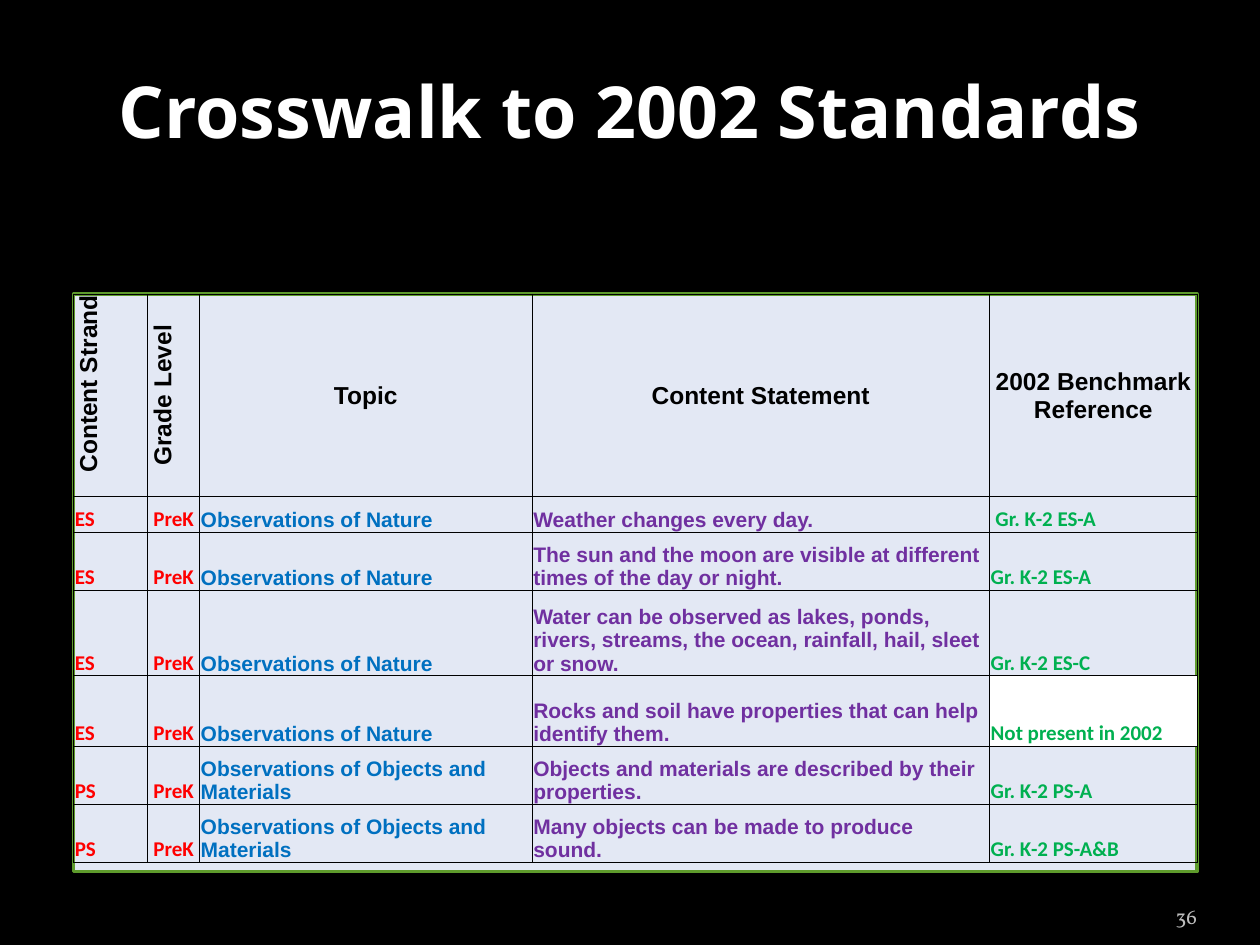
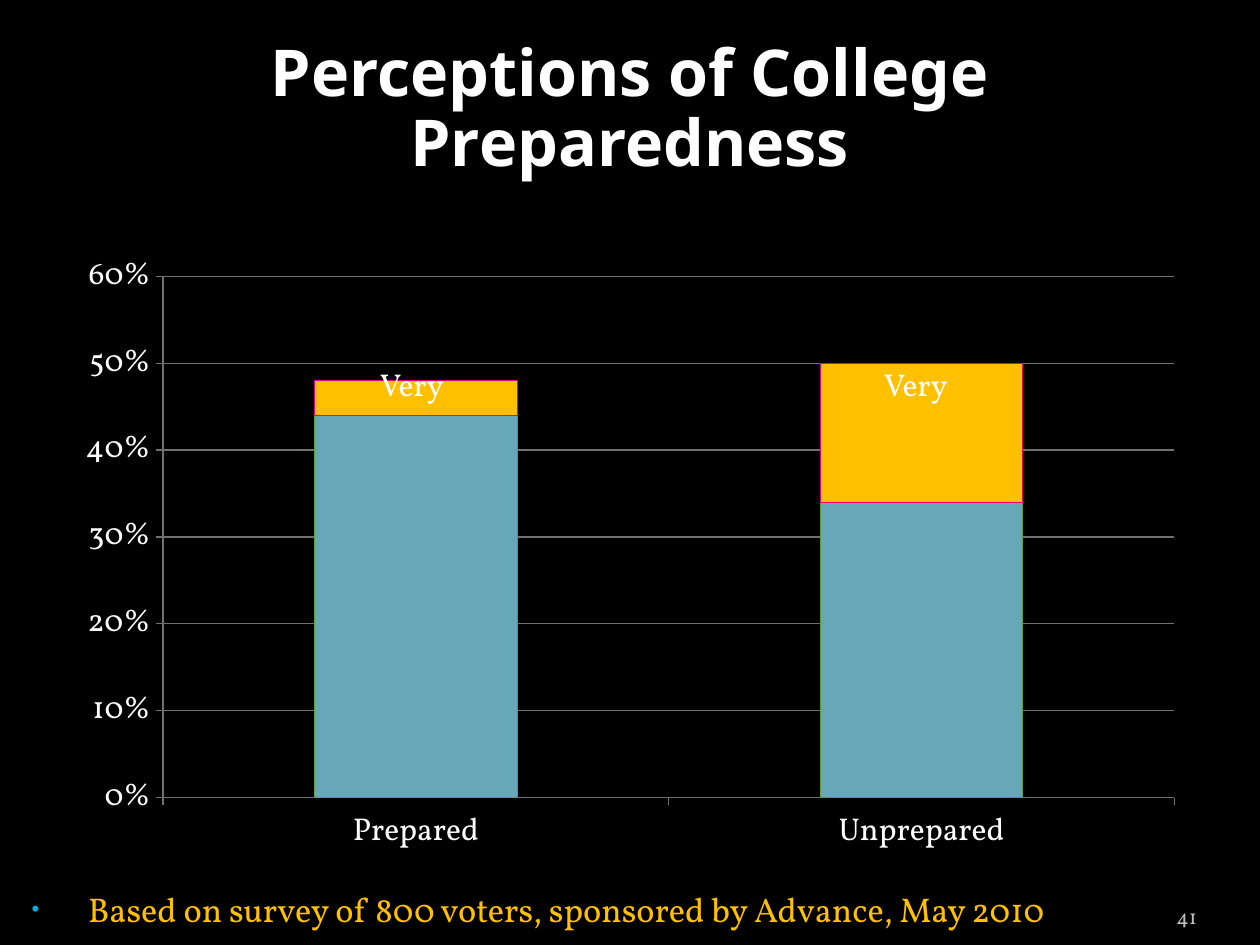
from lxml import etree
from pptx import Presentation
from pptx.chart.data import CategoryChartData
from pptx.dml.color import RGBColor
from pptx.enum.chart import XL_CHART_TYPE, XL_TICK_MARK
from pptx.enum.shapes import MSO_SHAPE
from pptx.enum.text import MSO_ANCHOR, MSO_AUTO_SIZE, PP_ALIGN
from pptx.oxml.ns import qn
from pptx.util import Inches, Pt

LEFT, CENTER, RIGHT = PP_ALIGN.LEFT, PP_ALIGN.CENTER, PP_ALIGN.RIGHT
TOP, MIDDLE, BOTTOM = MSO_ANCHOR.TOP, MSO_ANCHOR.MIDDLE, MSO_ANCHOR.BOTTOM
FIXED, GROW = MSO_AUTO_SIZE.NONE, MSO_AUTO_SIZE.SHAPE_TO_FIT_TEXT
STACKED, OUTSIDE = XL_CHART_TYPE.COLUMN_STACKED, XL_TICK_MARK.OUTSIDE
RECTANGLE = MSO_SHAPE.RECTANGLE

TITLE_AND_BODY, TITLE_ONLY = 1, 5
COLUMNS, ROWS = 120, 90
TITLE_FONT, TEXT_FONT, TABLE_FONT, CODE_FONT = "Noto Sans", "Vollkorn", "Arial", "Calibri"
COLORS = {
    "black": "000000", "white": "FFFFFF", "number": "BDBDBD", "panel": "E3E8F4",
    "panel line": "5E9B2C", "red": "FF0000", "blue": "0070C0", "purple": "7030A0",
    "green": "00B050", "bullet": "00ADDC", "gold": "FFC000", "teal": "66A7B9",
    "axis": "707070", "teal line": "5E9B2C", "gold line": "E6007E",
}

HEADINGS = ["Content Strand", "Grade Level", "Topic", "Content Statement",
            "2002 Benchmark Reference"]
NATURE = "Observations of Nature"
OBJECTS = "Observations of Objects and Materials"
STANDARDS = [
    ("ES", NATURE, "Weather changes every day.", " Gr. K-2 ES-A"),
    ("ES", NATURE, "The sun and the moon are visible at different times of the day or night.",
     "Gr. K-2 ES-A"),
    ("ES", NATURE, "Water can be observed as lakes, ponds, rivers, streams, the ocean, "
     "rainfall, hail, sleet or snow.", "Gr. K-2 ES-C"),
    ("ES", NATURE, "Rocks and soil have properties that can help identify them.",
     "Not present in 2002"),
    ("PS", OBJECTS, "Objects and materials are described by their properties.", "Gr. K-2 PS-A"),
    ("PS", OBJECTS, "Many objects can be made to produce sound.", "Gr. K-2 PS-A&B"),
]
CELL_STYLES = [(CODE_FONT, "red", LEFT), (CODE_FONT, "red", CENTER), (TABLE_FONT, "blue", LEFT),
               (TABLE_FONT, "purple", LEFT), (CODE_FONT, "green", LEFT)]
STANDARD_COLUMNS = [7.08, 4.92, 31.68, 43.56, 19.8]
STANDARD_ROWS = [19.32, 3.36, 5.52, 8.16, 6.72, 5.52, 5.52]


def color(name):
    return RGBColor.from_string(COLORS[name])


class Deck:
    """Shared style and current slide; lengths are columns and rows of the grid."""

    def __init__(self):
        self.presentation = Presentation()
        self.presentation.slide_width = Inches(10)
        self.presentation.slide_height = Inches(7.5)
        background = self.presentation.slide_master.background.fill
        background.solid()
        background.fore_color.rgb = color("black")
        self.slide = None

    def across(self, columns):
        return round(self.presentation.slide_width * columns / COLUMNS)

    def down(self, rows):
        return round(self.presentation.slide_height * rows / ROWS)

    def box(self, left, top, width, height):
        return self.across(left), self.down(top), self.across(width), self.down(height)

    def place(self, shape, *area):
        shape.left, shape.top, shape.width, shape.height = self.box(*area)

    def style_font(self, font, name, size, color_name, bold=False):
        font.name, font.size, font.bold = name, Pt(size), bold
        font.color.rgb = color(color_name)

    def fill_frame(self, frame, text, name, size, color_name, align=LEFT, anchor=TOP,
                   bold=False, fit=FIXED):
        frame.text = text
        frame.word_wrap = True
        frame.auto_size = fit
        frame.vertical_anchor = anchor
        paragraph = frame.paragraphs[0]
        paragraph.alignment = align
        self.style_font(paragraph.font, name, size, color_name, bold)
        return paragraph

    def add_slide(self, layout, title, title_size, number, line_spacing=1.0):
        layouts = self.presentation.slide_layouts
        self.slide = self.presentation.slides.add_slide(layouts[layout])
        heading = self.slide.shapes.title
        self.place(heading, 6, 5, 108, 11)
        paragraph = self.fill_frame(heading.text_frame, title, TITLE_FONT, title_size, "white",
                                    CENTER, MIDDLE, bold=True)
        paragraph.line_spacing = line_spacing
        frame = self.text((104, 84.25, 10, 4.8), number, 12, "number", RIGHT, BOTTOM)
        frame.margin_left = frame.margin_right = 0

    def text(self, area, text, size, color_name, align=LEFT, anchor=TOP, fit=FIXED):
        frame = self.slide.shapes.add_textbox(*self.box(*area)).text_frame
        self.fill_frame(frame, text, TEXT_FONT, size, color_name, align, anchor, fit=fit)
        return frame

    def bullet(self, area, text, size, color_name):
        body = self.slide.placeholders[1]
        self.place(body, *area)
        paragraph = self.fill_frame(body.text_frame, text, TEXT_FONT, size, color_name)
        paragraph.space_before = Pt(0)
        properties = paragraph._p.get_or_add_pPr()
        properties.set("marL", str(Inches(0.6)))
        properties.set("indent", str(Inches(-0.45)))
        bullet_color = etree.Element(qn("a:buClr"))
        etree.SubElement(bullet_color, qn("a:srgbClr"), val=COLORS["bullet"])
        bullet_parts = [bullet_color, etree.Element(qn("a:buSzPct"), val="65000"),
                        etree.Element(qn("a:buFont"), typeface="Arial"),
                        etree.Element(qn("a:buChar"), char="•")]
        default_font = properties.find(qn("a:defRPr"))
        for part in bullet_parts:
            default_font.addprevious(part)

    def panel(self, area, fill, line, line_width):
        shape = self.slide.shapes.add_shape(RECTANGLE, *self.box(*area))
        shape.shadow.inherit = False
        shape.fill.solid()
        shape.fill.fore_color.rgb = color(fill)
        shape.line.color.rgb = color(line)
        shape.line.width = Pt(line_width)

    def table(self, left, top, widths, heights):
        area = self.box(left, top, sum(widths), sum(heights))
        table = self.slide.shapes.add_table(len(heights), len(widths), *area).table
        table.first_row = table.horz_banding = False
        for column, width in zip(table.columns, widths):
            column.width = self.across(width)
        for row, height in zip(table.rows, heights):
            row.height = self.down(height)
        return table

    def cell(self, cell, text, name, size, color_name, align, anchor, fill=None, upward=False):
        cell.text = text
        cell.vertical_anchor = anchor
        cell.margin_left = cell.margin_right = cell.margin_top = Inches(0.01)
        cell.margin_bottom = 0
        paragraph = cell.text_frame.paragraphs[0]
        paragraph.alignment = align
        self.style_font(paragraph.font, name, size, color_name, bold=True)
        properties = cell._tc.get_or_add_tcPr()
        if upward:
            properties.set("vert", "vert270")
        for side in ("lnL", "lnR", "lnT", "lnB"):
            border = etree.SubElement(properties, qn(f"a:{side}"), w=str(Pt(0.5)))
            line_fill = etree.SubElement(border, qn("a:solidFill"))
            etree.SubElement(line_fill, qn("a:srgbClr"), val=COLORS["black"])
        if fill:
            cell.fill.solid()
            cell.fill.fore_color.rgb = color(fill)
        else:
            cell.fill.background()

    def stacked_chart(self, area, categories, series):
        """Series are tuples of name, values, fill colour and line colour."""
        data = CategoryChartData(number_format="0%")
        data.categories = categories
        for name, values, _, _ in series:
            data.add_series(name, values)
        chart = self.slide.shapes.add_chart(STACKED, *self.box(*area), data).chart
        self.style_font(chart.font, TEXT_FONT, 18, "white")
        chart.has_legend = chart.has_title = False
        plot = chart.plots[0]
        plot.gap_width, plot.overlap, plot.vary_by_categories = 150, 100, False
        for column, (_, _, fill, line) in zip(plot.series, series):
            column.format.fill.solid()
            column.format.fill.fore_color.rgb = color(fill)
            column.format.line.color.rgb = color(line)
            column.format.line.width = Pt(0.5)
        values_axis = chart.value_axis
        values_axis.minimum_scale, values_axis.maximum_scale = 0, 0.6
        values_axis.major_unit = 0.1
        values_axis.tick_labels.number_format = "0%"
        values_axis.tick_labels.number_format_is_linked = False
        values_axis.has_major_gridlines = True
        for axis in (values_axis, chart.category_axis):
            axis.major_tick_mark = OUTSIDE
        for part in (values_axis, chart.category_axis, values_axis.major_gridlines):
            part.format.line.color.rgb = color("axis")
            part.format.line.width = Pt(0.75)


def build_crosswalk(deck):
    deck.add_slide(TITLE_ONLY, "Crosswalk to 2002 Standards", 41, "36")
    deck.panel((7, 28, 107, 55), "panel", "panel line", 2)
    table = deck.table(7, 28, STANDARD_COLUMNS, STANDARD_ROWS)
    for index, heading in enumerate(HEADINGS):
        upward = index < 2
        deck.cell(table.cell(0, index), heading, TABLE_FONT, 14, "black",
                  RIGHT if index == 0 else CENTER, BOTTOM if upward else MIDDLE, upward=upward)
    for row, (strand, topic, statement, benchmark) in enumerate(STANDARDS, start=1):
        texts = (strand, "PreK", topic, statement, benchmark)
        for column, (text, (font, color_name, align)) in enumerate(zip(texts, CELL_STYLES)):
            fill = "white" if text.startswith("Not present") else None
            deck.cell(table.cell(row, column), text, font, 12, color_name, align, BOTTOM, fill)


def build_preparedness(deck):
    deck.add_slide(TITLE_AND_BODY, "Perceptions of College Preparedness", 36.9, "41",
                   line_spacing=0.9)
    deck.stacked_chart((6, 23, 108, 59.6), ["Prepared", "Unprepared"], [
        ("Series 1", (0.44, 0.34), "teal", "teal line"),
        ("Series 2", (0.04, 0.16), "gold", "gold line"),
    ])
    deck.bullet((0, 84, 108.25, 6),
                "Based on survey of 800 voters, sponsored by Advance, May 2010", 19.6, "gold")
    for left in (35, 83):
        deck.text((left, 34.2, 10, 4.8), "Very", 18, "white", fit=GROW)


def main():
    deck = Deck()
    build_crosswalk(deck)
    build_preparedness(deck)
    deck.presentation.save("out.pptx")


if __name__ == "__main__":
    main()
